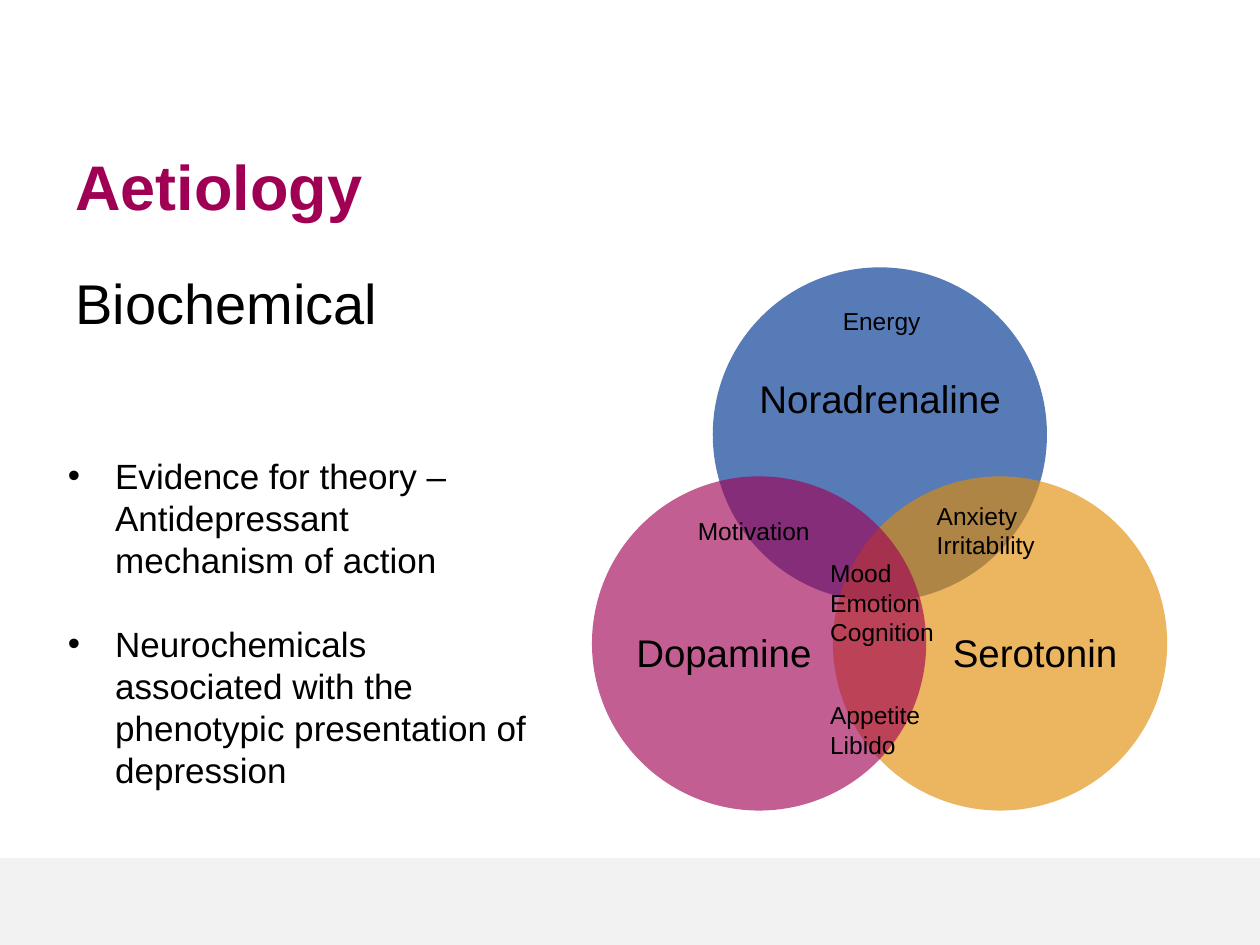
import pptx
import pptx.util
import pptx.dml.color
import pptx.enum.shapes
import pptx.enum.text
import lxml.etree

Pt = pptx.util.Pt
ANCHOR = pptx.enum.text.MSO_ANCHOR
ALIGN = pptx.enum.text.PP_ALIGN
SHAPE = pptx.enum.shapes.MSO_SHAPE
A = "{http://schemas.openxmlformats.org/drawingml/2006/main}"


def rgb(value):
    return pptx.dml.color.RGBColor.from_string(value)


def apply(target, values):
    for name, value in values.items():
        setattr(target, name, value)


class Slide:
    FONT = "Arial"
    INK = "000000"
    ACCENT = "A00054"
    LEADING = 1.2
    CIRCLE = 191

    def __init__(self, prs):
        self.s = prs.slides.add_slide(prs.slide_layouts[6])

    def shape(self, kind, x, y, w, h, fill, alpha=100):
        """Add a borderless shape; alpha is opacity in percent."""
        sp = self.s.shapes.add_shape(kind, Pt(x), Pt(y), Pt(w), Pt(h))
        sp.shadow.inherit = False
        sp.fill.solid()
        sp.fill.fore_color.rgb = rgb(fill)
        sp.line.fill.background()
        if alpha < 100:
            color = sp._element.spPr.find(f"{A}solidFill/{A}srgbClr")
            lxml.etree.SubElement(color, A + "alpha", val=str(alpha * 1000))

    def text(self, box, lines, size, color=INK, bold=False, leading=True,
             bullet=False, frame=None, para=None):
        """Add a text box with one paragraph for each line."""
        tf = self.s.shapes.add_textbox(*map(Pt, box)).text_frame
        apply(tf, {"word_wrap": True, **(frame or {})})
        for i, line in enumerate(lines):
            p = tf.paragraphs[0] if i == 0 else tf.add_paragraph()
            if leading:
                p.line_spacing = Pt(size * self.LEADING)
            apply(p, para or {})
            if bullet:
                self.bullet(p)
                if i:
                    p.space_before = Pt(size * self.LEADING)
            r = p.add_run()
            r.text = line
            apply(r.font, {"name": self.FONT, "size": Pt(size), "bold": bold})
            r.font.color.rgb = rgb(color)

    def bullet(self, p, indent=27):
        pPr = p._p.get_or_add_pPr()
        pPr.set("marL", str(Pt(indent)))
        pPr.set("indent", str(-Pt(indent)))
        lxml.etree.SubElement(pPr, A + "buFont", typeface=self.FONT)
        lxml.etree.SubElement(pPr, A + "buChar", char="•")

    def circle(self, x, y, fill, alpha, label, label_box):
        self.shape(SHAPE.OVAL, x, y, self.CIRCLE, self.CIRCLE, fill, alpha)
        margins = dict.fromkeys(
            ("margin_left", "margin_top", "margin_right", "margin_bottom"), 0)
        self.text(label_box, [label], 22, leading=False,
                  frame={"vertical_anchor": ANCHOR.MIDDLE, **margins},
                  para={"alignment": ALIGN.CENTER, "line_spacing": 0.9})


def main():
    prs = pptx.Presentation()
    apply(prs, {"slide_width": Pt(720), "slide_height": Pt(540)})
    slide = Slide(prs)

    slide.shape(SHAPE.RECTANGLE, 0, 490.3, 720, 49.7, "F2F2F2")
    slide.text((36, 150, 648, 333), ["Biochemical"], 32)
    slide.text((36, 77, 648, 58), ["Aetiology"], 36, Slide.ACCENT, bold=True,
               leading=False, frame={"vertical_anchor": ANCHOR.MIDDLE})
    slide.text((31.7, 256.3, 281, 201), [
        "Evidence for theory – Antidepressant mechanism of action",
        "Neurochemicals associated with the phenotypic presentation of "
        "depression",
    ], 20, bullet=True)

    circles = [
        (407.3, 152.8, "003893", 66, "Noradrenaline", (432.7, 186.5, 140.4, 85.7)),
        (476, 272.2, "E28C05", 64, "Serotonin", (534.2, 321.8, 114.5, 105.1)),
        (338.3, 272.2, Slide.ACCENT, 63, "Dopamine", (356.4, 321.8, 114.5, 105.1)),
    ]
    for circle in circles:
        slide.circle(*circle)

    symptoms = [
        ((474.5, 171.4, 85.7, 24.5), ["Energy"]),
        ((528.2, 282.6, 103.7, 41), ["Anxiety", "Irritability"]),
        ((467.3, 396.7, 103.7, 41), ["Appetite", "Libido"]),
        ((391.7, 291.2, 103.7, 24.5), ["Motivation"]),
        ((467.3, 315.4, 143.3, 58.3), ["Mood", "Emotion", "Cognition"]),
    ]
    for box, lines in symptoms:
        slide.text(box, lines, 14)

    prs.save("out.pptx")


if __name__ == "__main__":
    main()
